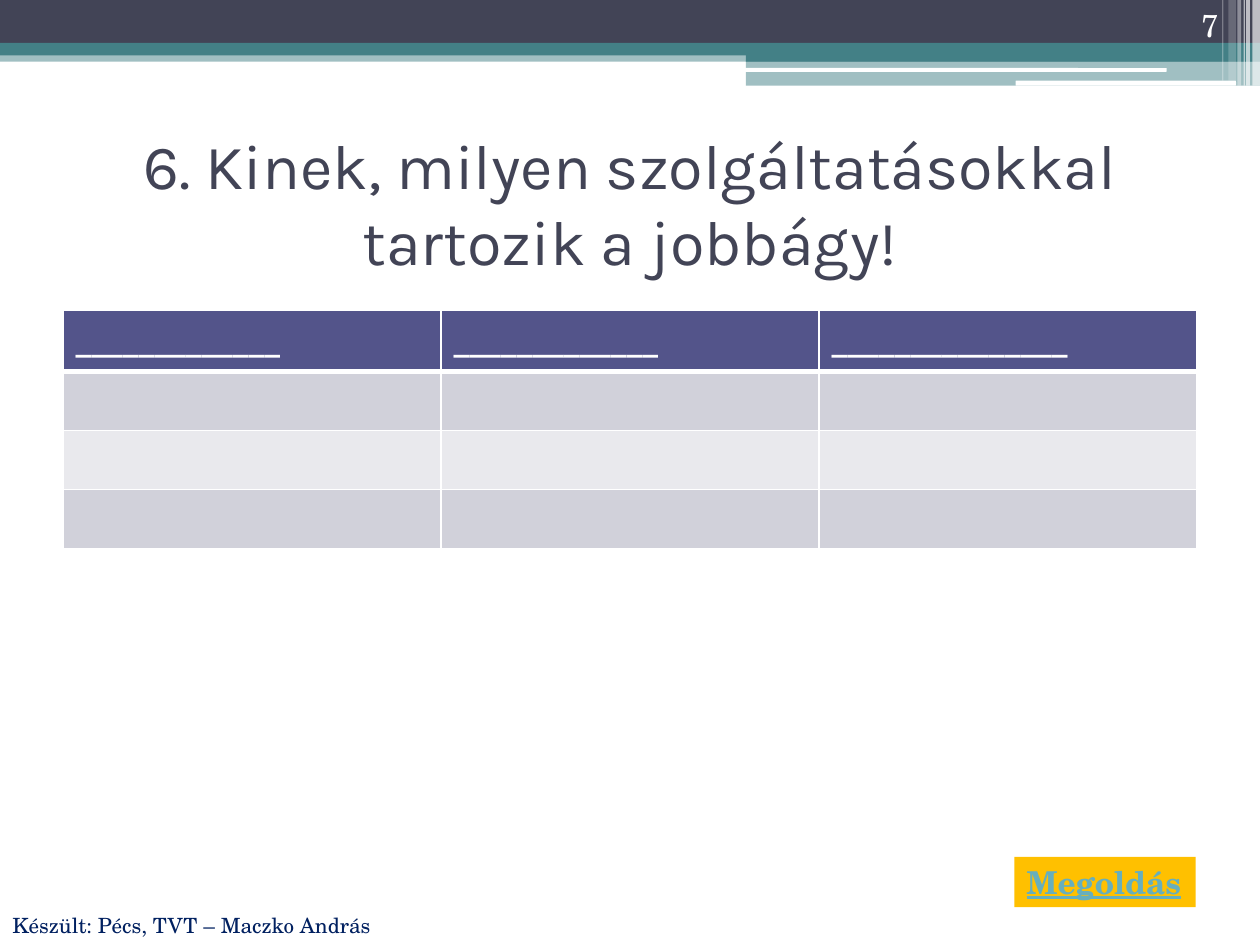
import dataclasses

import lxml.etree
import pptx
import pptx.dml.color
import pptx.enum.shapes
import pptx.enum.text
import pptx.oxml.ns
import pptx.util

Inches = pptx.util.Inches
Shape = pptx.enum.shapes.MSO_SHAPE
Align = pptx.enum.text.PP_ALIGN
Anchor = pptx.enum.text.MSO_ANCHOR
AutoSize = pptx.enum.text.MSO_AUTO_SIZE
qn = pptx.oxml.ns.qn


@dataclasses.dataclass(frozen=True)
class Theme:
    title_font: str = "Karla"
    body_font: str = "TeX Gyre Schola"
    title_size: int = 36
    body_size: int = 18
    credit_size: int = 12
    slate: str = "424456"
    teal: str = "438086"
    white: str = "FFFFFF"
    header: str = "53548A"
    band_dark: str = "D1D1DA"
    band_light: str = "E9E9ED"
    button: str = "FFC000"
    link: str = "67AFBD"
    navy: str = "002060"


theme = Theme()


def add_block(page, kind, left, top, width, height, color, alpha=100):
    block = page.shapes.add_shape(kind, Inches(left), Inches(top), Inches(width), Inches(height))
    block.shadow.inherit = False
    block.line.fill.background()
    block.fill.solid()
    block.fill.fore_color.rgb = pptx.dml.color.RGBColor.from_string(color)
    if alpha < 100:
        tint = block.fill._xPr.find(".//" + qn("a:srgbClr"))
        lxml.etree.SubElement(tint, qn("a:alpha"), val=str(alpha * 1000))
    return block


def write_text(frame, text, font, size, color, align=Align.LEFT, bold=False, underline=False):
    para = frame.paragraphs[0]
    para.text = text
    para.alignment = align
    para.font.name = font
    para.font.size = pptx.util.Pt(size)
    para.font.bold = bold
    para.font.underline = underline
    para.font.color.rgb = pptx.dml.color.RGBColor.from_string(color)


deck = pptx.Presentation()
deck.slide_width = Inches(10)
deck.slide_height = Inches(7.5)
page = deck.slides.add_slide(deck.slide_layouts[5])

for left, top, width, height, color, alpha in [
    (0, 0.4, 10, 0.09, theme.teal, 50),
    (0, 0, 10, 0.34, theme.slate, 100),
    (0, 0.34, 10, 0.1, theme.teal, 100),
    (5.92, 0.39, 4.08, 0.1, theme.teal, 100),
    (5.92, 0.48, 4.08, 0.2, theme.teal, 50),
]:
    add_block(page, Shape.RECTANGLE, left, top, width, height, color, alpha)

for left, top, width, height in [(5.91, 0.54, 3.35, 0.03), (8.06, 0.64, 1.75, 0.04)]:
    add_block(page, Shape.ROUNDED_RECTANGLE, left, top, width, height, theme.white)

for left, width, height, alpha in [
    (9.94, 0.06, 0.68, 65),
    (9.89, 0.03, 0.68, 65),
    (9.87, 0.01, 0.68, 60),
    (9.82, 0.03, 0.68, 40),
    (9.75, 0.06, 0.64, 20),
    (9.7, 0.01, 0.64, 30),
]:
    add_block(page, Shape.RECTANGLE, left, 0, width, height, theme.white, alpha)

title = page.shapes.title
title.left, title.top = Inches(0.5), Inches(1.02)
title.width, title.height = Inches(9), Inches(1.17)
title.text_frame.auto_size = AutoSize.NONE
title.text_frame.vertical_anchor = Anchor.MIDDLE
write_text(title.text_frame, "6. Kinek, milyen szolgáltatásokkal tartozik a jobbágy!",
           theme.title_font, theme.title_size, theme.slate, Align.CENTER)

headings = ["_" * 13, "_" * 13, "_" * 15]
row_fills = [theme.header, theme.band_dark, theme.band_light, theme.band_dark]
row_height = 0.47
table = page.shapes.add_table(
    len(row_fills), len(headings), Inches(0.5), Inches(2.46),
    Inches(9), Inches(row_height * len(row_fills))).table
for row_index, fill in enumerate(row_fills):
    table.rows[row_index].height = Inches(row_height)
    for column_index, heading in enumerate(headings):
        cell = table.cell(row_index, column_index)
        cell.fill.solid()
        cell.fill.fore_color.rgb = pptx.dml.color.RGBColor.from_string(fill)
        if row_index == 0:
            write_text(cell.text_frame, heading, theme.body_font, theme.body_size,
                       theme.white, bold=True)
        widths = {"lnL": 1, "lnR": 1,
                  "lnT": 3 if row_index == 1 else 1,
                  "lnB": 3 if row_index == 0 else 1}
        properties = cell._tc.get_or_add_tcPr()
        for position, (side, width) in enumerate(widths.items()):
            border = lxml.etree.Element(qn("a:" + side), w=str(pptx.util.Pt(width)))
            paint = lxml.etree.SubElement(border, qn("a:solidFill"))
            lxml.etree.SubElement(paint, qn("a:srgbClr"), val=theme.white)
            properties.insert(position, border)

button = add_block(page, Shape.RECTANGLE, 8.05, 6.8, 1.44, 0.4, theme.button)
button.text_frame.word_wrap = False
button.text_frame.auto_size = AutoSize.SHAPE_TO_FIT_TEXT
button.text_frame.vertical_anchor = Anchor.TOP
write_text(button.text_frame, "Megoldás", theme.body_font, theme.body_size, theme.link,
           bold=True, underline=True)

number = page.shapes.add_textbox(Inches(8.94), Inches(0), Inches(0.83), Inches(0.4))
number.text_frame.word_wrap = True
number.text_frame.vertical_anchor = Anchor.BOTTOM
write_text(number.text_frame, "7", theme.body_font, theme.body_size, theme.white, Align.RIGHT)

credit = page.shapes.add_textbox(Inches(0), Inches(7.19), Inches(5.23), Inches(0.3))
credit.text_frame.word_wrap = True
credit.text_frame.auto_size = AutoSize.SHAPE_TO_FIT_TEXT
write_text(credit.text_frame, "Készült: Pécs, TVT – Maczko András",
           theme.body_font, theme.credit_size, theme.navy)

deck.save("out.pptx")
